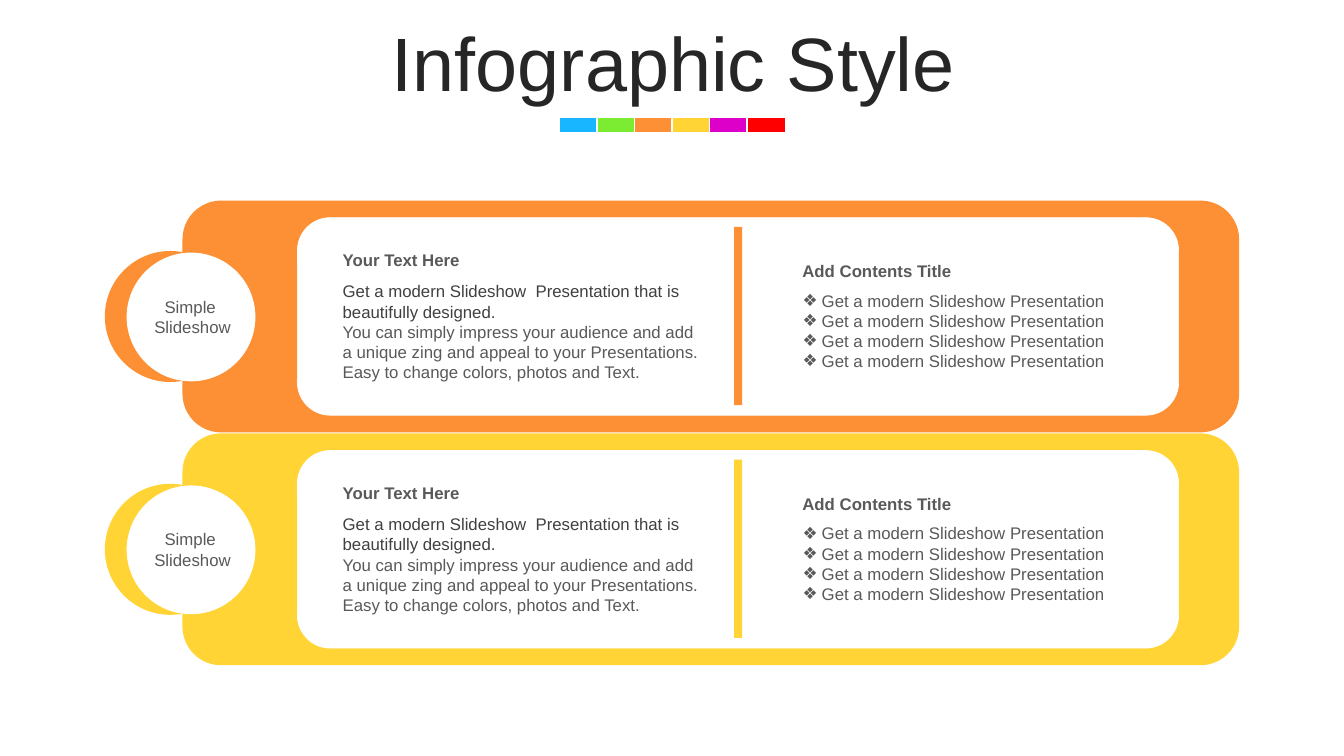
from lxml.etree import SubElement
from pptx import Presentation
from pptx.dml.color import RGBColor as RGB
from pptx.enum.shapes import MSO_SHAPE as Kind
from pptx.enum.text import MSO_ANCHOR as Anchor, MSO_AUTO_SIZE as Auto, PP_ALIGN as Align
from pptx.oxml.ns import qn
from pptx.util import Inches, Pt

WHITE, GREY, DARK, INK = "FFFFFF", "595959", "404040", "262626"
ORANGE, YELLOW = "FD9034", "FFD434"
STRIP = ["17B6FF", "7CEC32", ORANGE, YELLOW, "DC00C8", "FF0000"]
BANDS = [(1.99, ORANGE), (4.3, YELLOW)]
LABEL = ["Simple ", "Slideshow"]
STORY = [
    "Get a modern Slideshow  Presentation that is beautifully designed.",
    "You can simply impress your audience and add a unique zing and appeal "
    "to your Presentations. Easy to change colors, photos and Text.",
]
ITEMS = ["Get a modern Slideshow Presentation"] * 4


def paint(part, color):
    """Give a fill, line or font one solid colour."""
    if hasattr(part, "solid"):
        part.solid()
        part.fore_color.rgb = RGB.from_string(color)
    elif hasattr(part, "fill"):
        part.fill.solid()
        part.fill.fore_color.rgb = RGB.from_string(color)


def place(shape, x, y, w, h):
    """Move and size a shape in inches."""
    shape.left, shape.top, shape.width, shape.height = map(Inches, (x, y, w, h))


def add_form(slide, kind, box, color, edge=0):
    """Add a filled shape with an optional white edge."""
    form = slide.shapes.add_shape(kind, *map(Inches, box))
    form.shadow.inherit = False
    paint(form.fill, color)
    if edge:
        paint(form.line, WHITE)
        form.line.width = Pt(edge)
    else:
        form.line.fill.background()


def write(shape, lines, colors, size=12, bold=False, align=Align.LEFT):
    """Fill a shape with paragraphs, one colour for each."""
    frame = shape.text_frame
    frame.word_wrap = True
    frame.auto_size = Auto.NONE
    frame.text = "\n".join(lines)
    for para, color in zip(frame.paragraphs, colors):
        para.alignment = align
        para.space_before = Pt(0)
        for run in para.runs:
            run.font.name, run.font.size, run.font.bold = "Arial", Pt(size), bold
            paint(run.font, color)


def add_text(slide, box, lines, colors, **style):
    """Add a text box."""
    write(slide.shapes.add_textbox(*map(Inches, box)), lines, colors, **style)


def set_title(slide):
    """Place and format the slide title."""
    title = slide.shapes.title
    place(title, 0.35, 0.24, 12.66, 0.79)
    write(title, ["Infographic Style"], [INK], size=54, align=Align.CENTER)
    frame = title.text_frame
    frame.vertical_anchor = Anchor.MIDDLE
    frame.margin_top = Inches(0.1)
    frame.paragraphs[0].line_spacing = 0.9
    frame.paragraphs[0].space_before = Pt(10)


def set_list(slide, body, top):
    """Place a body placeholder in front and fill it with bullets."""
    slide.shapes._spTree.append(body._element)
    place(body, 7.86, top, 3.45, 0.91)
    write(body, ITEMS, [GREY] * len(ITEMS))
    for para in body.text_frame.paragraphs:
        props = para._p.get_or_add_pPr()
        props.set("marL", str(Inches(0.19)))
        props.set("indent", str(-Inches(0.19)))
        SubElement(props, qn("a:buFont"), typeface="Arial")
        SubElement(props, qn("a:buChar"), char="❖")


def add_band(slide, top, color, body):
    """Add one coloured band with its badge, story and list."""
    add_form(slide, Kind.ROUNDED_RECTANGLE, (1.81, top, 10.48, 2.3), color)
    add_form(slide, Kind.ROUNDED_RECTANGLE, (2.95, top + 0.17, 8.74, 1.96), WHITE, 0.5)
    add_form(slide, Kind.OVAL, (1.04, top + 0.5, 1.3, 1.3), color)
    add_form(slide, Kind.OVAL, (1.26, top + 0.52, 1.27, 1.27), WHITE, 0.5)
    add_form(slide, Kind.RECTANGLE, (7.28, top + 0.26, 0.08, 1.77), color)
    add_text(slide, (1.34, top + 0.9, 1.14, 0.5), LABEL, [GREY] * 2, align=Align.CENTER)
    add_text(slide, (3.3, top + 0.44, 3.78, 0.3), ["Your Text Here"], [GREY], bold=True)
    add_text(slide, (3.3, top + 0.75, 3.78, 1.11), STORY, [DARK, GREY])
    add_text(slide, (7.86, top + 0.55, 3.45, 0.3), ["Add Contents Title"], [GREY], bold=True)
    set_list(slide, body, top + 0.84)


def main():
    """Build and save the slide."""
    deck = Presentation()
    deck.slide_width, deck.slide_height = Inches(13.33), Inches(7.5)
    slide = deck.slides.add_slide(deck.slide_layouts[3])
    set_title(slide)
    for i, color in enumerate(STRIP):
        add_form(slide, Kind.RECTANGLE, (5.55 + 0.372 * i, 1.16, 0.38, 0.16), color, 1)
    bodies = list(slide.placeholders)[1:]
    for (top, color), body in zip(BANDS, bodies):
        add_band(slide, top, color, body)
    deck.save("out.pptx")


if __name__ == "__main__":
    main()
